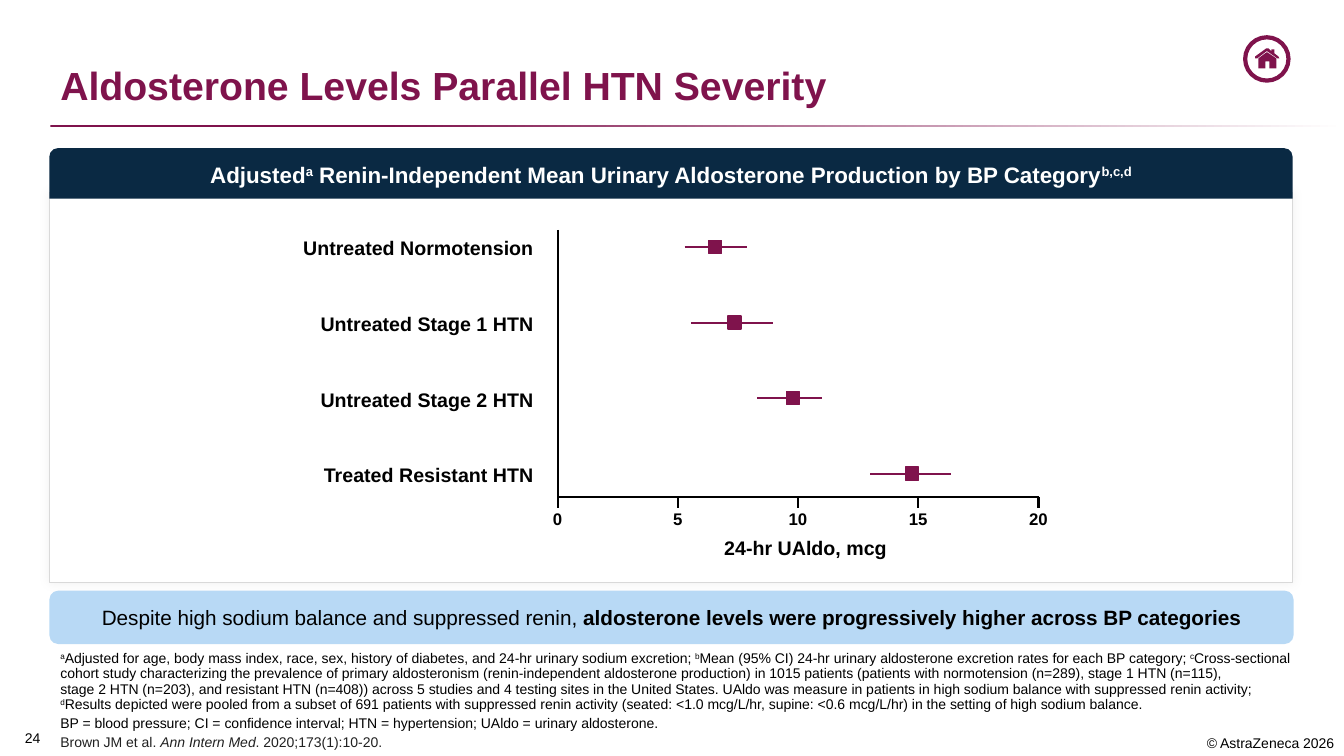
from lxml.etree import SubElement
from pptx import Presentation
from pptx.dml.color import RGBColor
from pptx.enum.shapes import MSO_CONNECTOR, MSO_SHAPE
from pptx.enum.text import MSO_ANCHOR, PP_ALIGN
from pptx.oxml.ns import qn
from pptx.util import Inches, Pt

PLUM, NAVY, SKY = "7F134C", "0A2943", "B8D9F5"
BLACK, WHITE, GREY, CHARCOAL = "000000", "FFFFFF", "D9D9D9", "212121"

TITLE = [("Aldosterone Levels Parallel HTN Severity", "bold")]
HEADER = [
    ("Adjusted", "bold"), ("a", "bold super"),
    (" Renin-Independent Mean Urinary Aldosterone Production by BP Category", "bold"),
    ("b,c,d", "bold super"),
]
TAKEAWAY = [
    ("Despite high sodium balance and suppressed renin, ", ""),
    ("aldosterone levels were progressively higher across BP categories", "bold"),
]
FOOTNOTES = [
    ("a", "super"),
    ("Adjusted for age, body mass index, race, sex, history of diabetes, and 24-hr urinary "
     "sodium excretion; ", ""),
    ("b", "super"),
    ("Mean (95% CI) 24-hr urinary aldosterone excretion rates for each BP category; ", ""),
    ("c", "super"),
    ("Cross-sectional cohort study characterizing the prevalence of primary aldosteronism "
     "(renin-independent aldosterone production) in 1015 patients (patients with normotension "
     "(n=289), stage 1 HTN (n=115), ", ""),
    ("", "break"),
    ("stage 2 HTN (n=203), and resistant HTN (n=408)) across 5 studies and 4 testing sites in "
     "the United States. UAldo was measure in patients in high sodium balance with suppressed "
     "renin activity; ", ""),
    ("d", "super"),
    ("Results depicted were pooled from a subset of 691 patients with suppressed renin activity "
     "(seated: <1.0 mcg/L/hr, supine: <0.6 mcg/L/hr) in the setting of high sodium balance.", ""),
]
ABBREVIATIONS = [("BP = blood pressure; CI = confidence interval; HTN = hypertension; "
                  "UAldo = urinary aldosterone.", "")]
CITATION = [("Brown JM et al. ", "charcoal"), ("Ann Intern Med", "italic charcoal"),
            (". 2020;173(1):10-20.", "charcoal")]

CATEGORIES = [
    ("Untreated Normotension", 5.28, 6.56, 7.88),
    ("Untreated Stage 1 HTN", 5.55, 7.36, 8.97),
    ("Untreated Stage 2 HTN", 8.3, 9.79, 10.99),
    ("Treated Resistant HTN", 13, 14.74, 16.35),
]
TICKS = [0, 5, 10, 15, 20]
AXIS_LEFT, AXIS_RIGHT, AXIS_TOP, AXIS_Y = 5.53, 10.3, 2.28, 4.93
FIRST_ROW, ROW_STEP, MARKER = 2.45, 0.75, 0.13

ROOF = [(1268, 56), (1264, 53), (1264, 49), (1261, 49), (1261, 51), (1258, 48), (1256, 48),
        (1245, 56), (1245, 58), (1247, 58), (1256, 51), (1257, 51), (1267, 58), (1269, 58)]
WALLS = [(1256, 52), (1248, 58), (1248, 68), (1255, 68), (1255, 61), (1259, 61), (1259, 68),
         (1266, 68), (1266, 58), (1257, 52)]


def color(value):
    """Turn a hex string into a colour."""
    return RGBColor.from_string(value)


def box(left, top, width, height):
    """Convert a frame in inches to lengths."""
    return [Inches(value) for value in (left, top, width, height)]


def write(shape, paragraphs, size, ink=BLACK, align=PP_ALIGN.LEFT, anchor=MSO_ANCHOR.MIDDLE,
          spacing=1.0):
    """Fill a shape with paragraphs of (text, style) runs."""
    frame = shape.text_frame
    frame.word_wrap = True
    frame.vertical_anchor = anchor
    for index, runs in enumerate(paragraphs):
        paragraph = frame.add_paragraph() if index else frame.paragraphs[0]
        paragraph.alignment = align
        paragraph.line_spacing = spacing
        paragraph.space_before = Pt(3 if index else 0)
        for text, style in runs:
            if style == "break":
                paragraph.add_line_break()
                continue
            run = paragraph.add_run()
            run.text = text
            run.font.name, run.font.size = "Arial", Pt(size)
            run.font.bold = "bold" in style
            run.font.italic = "italic" in style
            run.font.color.rgb = color(CHARCOAL if "charcoal" in style else ink)
            if "super" in style:
                run._r.get_or_add_rPr().set("baseline", "30000")
    return shape


def add_text(slide, frame, paragraphs, size, **options):
    """Add a text box."""
    return write(slide.shapes.add_textbox(*box(*frame)), paragraphs, size, **options)


def paint(shape, fill, line=None, width=1):
    """Give a shape a flat fill and an optional outline."""
    shape.shadow.inherit = False
    shape.fill.solid()
    shape.fill.fore_color.rgb = color(fill)
    if line:
        shape.line.color.rgb = color(line)
        shape.line.width = Pt(width)
    else:
        shape.line.fill.background()
    return shape


def add_shape(slide, kind, frame, fill, line=None, width=1):
    """Add a painted preset shape."""
    return paint(slide.shapes.add_shape(kind, *box(*frame)), fill, line, width)


def add_line(slide, x1, y1, x2, y2, ink=BLACK):
    """Add a straight line without shadow."""
    line = slide.shapes.add_connector(MSO_CONNECTOR.STRAIGHT, *box(x1, y1, x2, y2))
    line.line.color.rgb = color(ink)
    line.line.width = Pt(1.5)
    SubElement(line._element.spPr, qn("a:effectLst"))


def add_glow(shape):
    """Add a faint soft shadow around a shape."""
    effects = shape._element.spPr.find(qn("a:effectLst"))
    shadow = SubElement(effects, qn("a:outerShdw"), blurRad=str(Pt(8)), dist="0", dir="0",
                        algn="ctr", rotWithShape="0")
    tint = SubElement(shadow, qn("a:srgbClr"), val=BLACK)
    SubElement(tint, qn("a:alpha"), val="5000")


def add_home_button(slide):
    """Draw the round home button."""
    add_shape(slide, MSO_SHAPE.OVAL, (12.35, 0.37, 0.43, 0.43), WHITE, PLUM, 3)
    for outline in (ROOF, WALLS):
        builder = slide.shapes.build_freeform(*outline[0], scale=Inches(0.01))
        builder.add_line_segments(outline[1:], close=True)
        paint(builder.convert_to_shape(), PLUM)


def add_title_rule(slide):
    """Draw the fading rule under the title."""
    rule = add_shape(slide, MSO_SHAPE.RECTANGLE, (0.5, 1.24, 12.83, 0.02), PLUM)
    rule.fill.gradient()
    rule.fill.gradient_angle = 0
    for stop, position, ink in zip(rule.fill.gradient_stops, (0.26, 1), (PLUM, WHITE)):
        stop.position = position
        stop.color.rgb = color(ink)


def axis_x(value):
    """Place a value on the horizontal axis."""
    return AXIS_LEFT + (AXIS_RIGHT - AXIS_LEFT) * value / TICKS[-1]


def add_forest_plot(slide):
    """Draw the axes, means and confidence intervals."""
    add_line(slide, AXIS_LEFT, AXIS_TOP, AXIS_LEFT, AXIS_Y)
    add_line(slide, AXIS_LEFT, AXIS_Y, AXIS_RIGHT, AXIS_Y)
    for tick in TICKS:
        x = axis_x(tick)
        add_line(slide, x, AXIS_Y, x, AXIS_Y + 0.11)
        add_text(slide, (x - 0.2, 5, 0.4, 0.3), [[(str(tick), "bold")]], 12,
                 align=PP_ALIGN.CENTER)
    add_text(slide, (5.53, 5.26, 4.92, 0.34), [[("24-hr UAldo, mcg", "bold")]], 14,
             align=PP_ALIGN.CENTER)
    for row, (name, low, mean, high) in enumerate(CATEGORIES):
        y = FIRST_ROW + row * ROW_STEP
        add_text(slide, (2.7, y - 0.16, 2.69, 0.34), [[(name, "bold")]], 14,
                 align=PP_ALIGN.RIGHT)
        add_line(slide, axis_x(low), y, axis_x(high), y, PLUM)
        add_shape(slide, MSO_SHAPE.RECTANGLE,
                  (axis_x(mean) - MARKER / 2, y - MARKER / 2, MARKER, MARKER), PLUM, PLUM)


def main():
    """Build and save the slide."""
    presentation = Presentation()
    presentation.slide_width, presentation.slide_height = Inches(13.33), Inches(7.5)
    slide = presentation.slides.add_slide(presentation.slide_layouts[6])
    add_text(slide, (11.11, 7.23, 2.22, 0.27), [[("© AstraZeneca 2026", "")]], 10,
             align=PP_ALIGN.RIGHT, anchor=MSO_ANCHOR.BOTTOM)
    add_title_rule(slide)
    add_home_button(slide)
    add_text(slide, (0.5, 0.25, 12.33, 0.88), [TITLE], 28, ink=PLUM,
             anchor=MSO_ANCHOR.BOTTOM, spacing=0.9)
    add_text(slide, (0.5, 6.4, 12.45, 1.1), [FOOTNOTES, ABBREVIATIONS, CITATION], 10,
             anchor=MSO_ANCHOR.BOTTOM, spacing=0.9)
    number = add_text(slide, (0, 7.1, 0.5, 0.4), [[("24", "")]], 10, align=PP_ALIGN.RIGHT)
    number.text_frame.margin_bottom = 0
    add_glow(add_shape(slide, MSO_SHAPE.RECTANGLE, (0.49, 1.91, 12.33, 3.87), WHITE, GREY))
    takeaway = add_shape(slide, MSO_SHAPE.ROUNDED_RECTANGLE, (0.49, 5.86, 12.34, 0.53), SKY)
    write(takeaway, [TAKEAWAY], 14.8, align=PP_ALIGN.CENTER)
    header = add_shape(slide, MSO_SHAPE.ROUND_2_SAME_RECTANGLE, (0.49, 1.47, 12.33, 0.5), NAVY)
    write(header, [HEADER], 16, ink=WHITE, align=PP_ALIGN.CENTER)
    add_forest_plot(slide)
    presentation.save("out.pptx")


if __name__ == "__main__":
    main()
